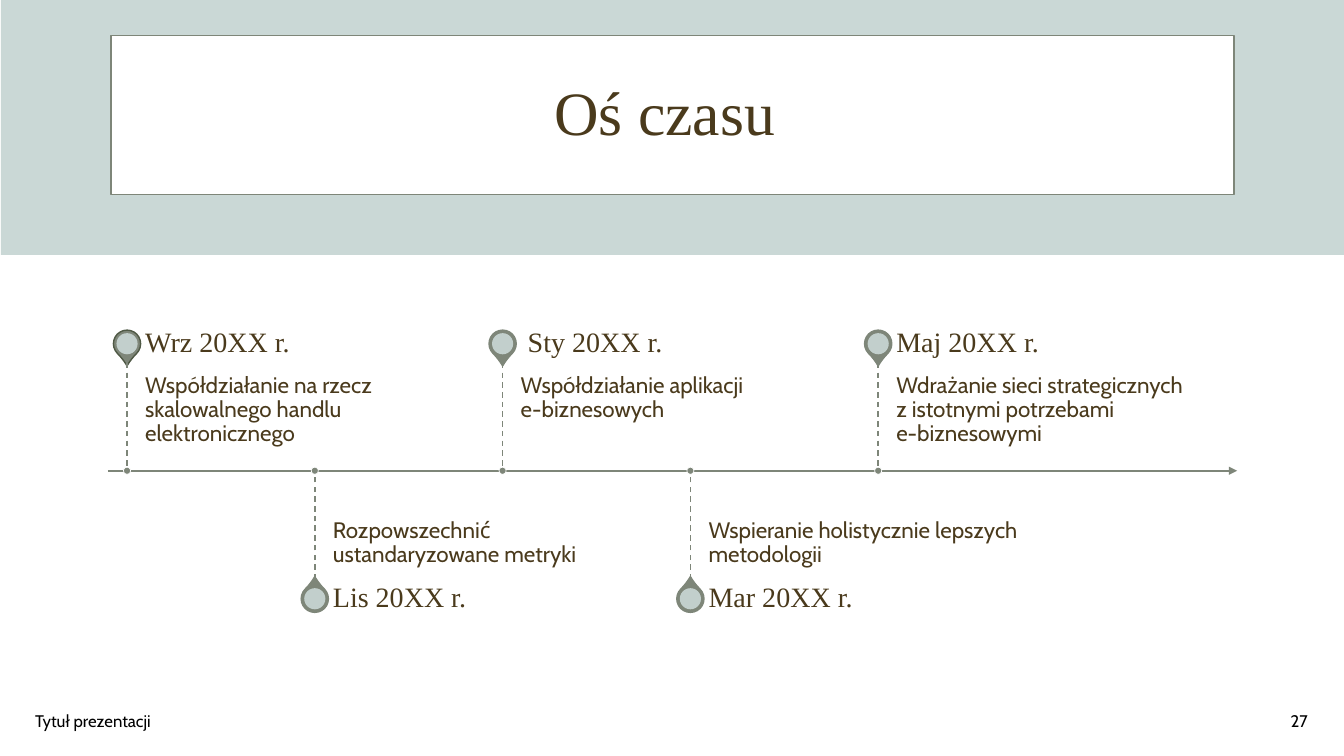
from dataclasses import dataclass

import pptx
import pptx.dml.color
import pptx.enum.dml
import pptx.enum.shapes
import pptx.enum.text
import pptx.oxml
import pptx.oxml.ns
import pptx.util

Inches = pptx.util.Inches
Pt = pptx.util.Pt
Shape = pptx.enum.shapes.MSO_SHAPE
Align = pptx.enum.text.PP_ALIGN
Anchor = pptx.enum.text.MSO_ANCHOR


@dataclass(frozen=True)
class Theme:
    heading_font: str = "Times New Roman"
    body_font: str = "Cabin"
    title_size: int = 44
    date_size: int = 20
    body_size: int = 16
    footer_size: int = 12
    band: str = "CAD8D6"
    accent: str = "7E8679"
    dark_accent: str = "4F5945"
    text: str = "4A3A1C"
    footer: str = "000000"
    white: str = "FFFFFF"


def color(value):
    return pptx.dml.color.RGBColor.from_string(value)


def set_values(target, values):
    for name, value in values.items():
        setattr(target, name, value)


class SlideBuilder:
    def __init__(self, slide, theme):
        self.slide = slide
        self.theme = theme

    def shape(self, kind, box, fill, line=None, width=1, rotation=0, alpha=None):
        shape = self.slide.shapes.add_shape(kind, *map(Inches, box))
        shape.shadow.inherit = False
        shape.rotation = rotation
        shape.fill.solid()
        shape.fill.fore_color.rgb = color(fill)
        if line:
            shape.line.color.rgb = color(line)
            shape.line.width = Pt(width)
        else:
            shape.line.fill.background()
        if alpha:
            fill_color = shape._element.spPr.find(".//" + pptx.oxml.ns.qn("a:srgbClr"))
            fill_color.append(pptx.oxml.parse_xml(
                f'<a:alpha {pptx.oxml.ns.nsdecls("a")} val="{alpha * 1000}"/>'))
        return shape

    def circle(self, x, y, diameter, fill, **style):
        box = (x - diameter / 2, y - diameter / 2, diameter, diameter)
        return self.shape(Shape.OVAL, box, fill, **style)

    def line(self, start, end, width, dashed=False, arrow=False):
        line = self.slide.shapes.add_connector(
            pptx.enum.shapes.MSO_CONNECTOR.STRAIGHT, *map(Inches, start + end))
        line.line.color.rgb = color(self.theme.accent)
        line.line.width = Pt(width)
        if dashed:
            line.line.dash_style = pptx.enum.dml.MSO_LINE.DASH
        namespace = pptx.oxml.ns.nsdecls("a")
        if arrow:
            line.line._get_or_add_ln().append(
                pptx.oxml.parse_xml(f'<a:tailEnd {namespace} type="triangle"/>'))
        line._element.spPr.append(pptx.oxml.parse_xml(f"<a:effectLst {namespace}/>"))

    def format_text(self, shape, text, font, size, ink, anchor=Anchor.MIDDLE,
                    align=Align.LEFT, margins=(0.1, 0.05, 0.1, 0.05), spacing=0.9):
        frame = shape.text_frame
        sides = ("margin_left", "margin_top", "margin_right", "margin_bottom")
        set_values(frame, {
            "word_wrap": True,
            "auto_size": pptx.enum.text.MSO_AUTO_SIZE.NONE,
            "vertical_anchor": anchor,
            **dict(zip(sides, map(Inches, margins))),
        })
        paragraph = frame.paragraphs[0]
        paragraph.text = text
        set_values(paragraph, {"alignment": align, "line_spacing": spacing})
        for run in paragraph.runs:
            set_values(run.font, {"name": font, "size": Pt(size), "bold": False})
            run.font.color.rgb = color(ink)

    def text(self, box, *content, **style):
        self.format_text(self.slide.shapes.add_textbox(*map(Inches, box)), *content, **style)

    def title(self, box, text):
        title = self.slide.shapes.title
        names = ("left", "top", "width", "height")
        set_values(title, dict(zip(names, map(Inches, box))))
        self.format_text(title, text, self.theme.heading_font, self.theme.title_size,
                         self.theme.text, align=Align.CENTER)
        # Bring the title in front of its card
        self.slide.shapes._spTree.append(title._element)

    def milestone(self, x, axis_y, date, description, above, outline):
        theme = self.theme
        if above:
            date_y, body_y, stem_y, pin_y = 3.22, 3.6, 3.6, 3.41
            rotation, anchor, margins = 135, Anchor.TOP, (0, 0.11, 0.11, 0.17)
        else:
            date_y, body_y, stem_y, pin_y = 5.75, axis_y, 5.75, 5.94
            rotation, anchor, margins = 315, Anchor.BOTTOM, (0, 0.17, 0, 0.11)
        pin = 0.27
        drop = self.shape(Shape.TEAR, (x - pin / 2, pin_y - pin / 2, pin, pin),
                          theme.accent, line=outline, rotation=rotation)
        drop.adjustments[0] = 1.15
        self.circle(x, pin_y, 0.21, theme.band, alpha=90)
        text_x = x + 0.18
        self.text((text_x, body_y, 3.1, 1.07), description, theme.body_font,
                  theme.body_size, theme.text, anchor=anchor, margins=margins)
        self.text((text_x, date_y, 3.1, 0.38), date, theme.heading_font,
                  theme.date_size, theme.text, margins=(0, 0, 0.14, 0))
        self.line((x, stem_y), (x, axis_y), 1, dashed=True)
        self.circle(x, axis_y, 0.07, theme.accent, line=theme.white, width=0.5)


def main():
    presentation = pptx.Presentation()
    presentation.slide_width = Inches(13.33)
    presentation.slide_height = Inches(7.5)
    slide = presentation.slides.add_slide(presentation.slide_layouts[5])
    theme = Theme()
    builder = SlideBuilder(slide, theme)

    # Header band with title card
    builder.shape(Shape.RECTANGLE, (0.01, 0, 13.32, 2.53), theme.band)
    builder.shape(Shape.RECTANGLE, (1.1, 0.35, 11.14, 1.58), theme.white, line=theme.accent)
    builder.title((0.42, 0.42, 12.5, 1.45), "Oś czasu ")

    # Footer
    footer_style = (theme.body_font, theme.footer_size, theme.footer)
    builder.text((0.25, 6.95, 4.5, 0.4), "Tytuł prezentacji", *footer_style, spacing=1)
    builder.text((10.07, 6.95, 3, 0.4), "27", *footer_style, align=Align.RIGHT, spacing=1)

    # Timeline, milestones alternating above and below the axis
    axis_y = 4.67
    builder.line((1.07, axis_y), (12.27, axis_y), 1.5, arrow=True)
    milestones = [
        ("Wrz 20XX r.", "Współdziałanie na rzecz skalowalnego handlu elektronicznego"),
        ("Lis 20XX r.", "Rozpowszechnić ustandaryzowane metryki"),
        (" Sty 20XX r.", "Współdziałanie aplikacji\ne-biznesowych"),
        ("Mar 20XX r.", "Wspieranie holistycznie lepszych metodologii"),
        ("Maj 20XX r.",
         "Wdrażanie sieci strategicznych z istotnymi potrzebami\ne-biznesowymi"),
    ]
    first_x, last_x = 1.26, 8.71
    step = (last_x - first_x) / (len(milestones) - 1)
    for index, (date, description) in enumerate(milestones):
        outline = theme.dark_accent if index == 0 else theme.accent
        builder.milestone(first_x + index * step, axis_y, date, description,
                          above=index % 2 == 0, outline=outline)

    presentation.save("out.pptx")


if __name__ == "__main__":
    main()
